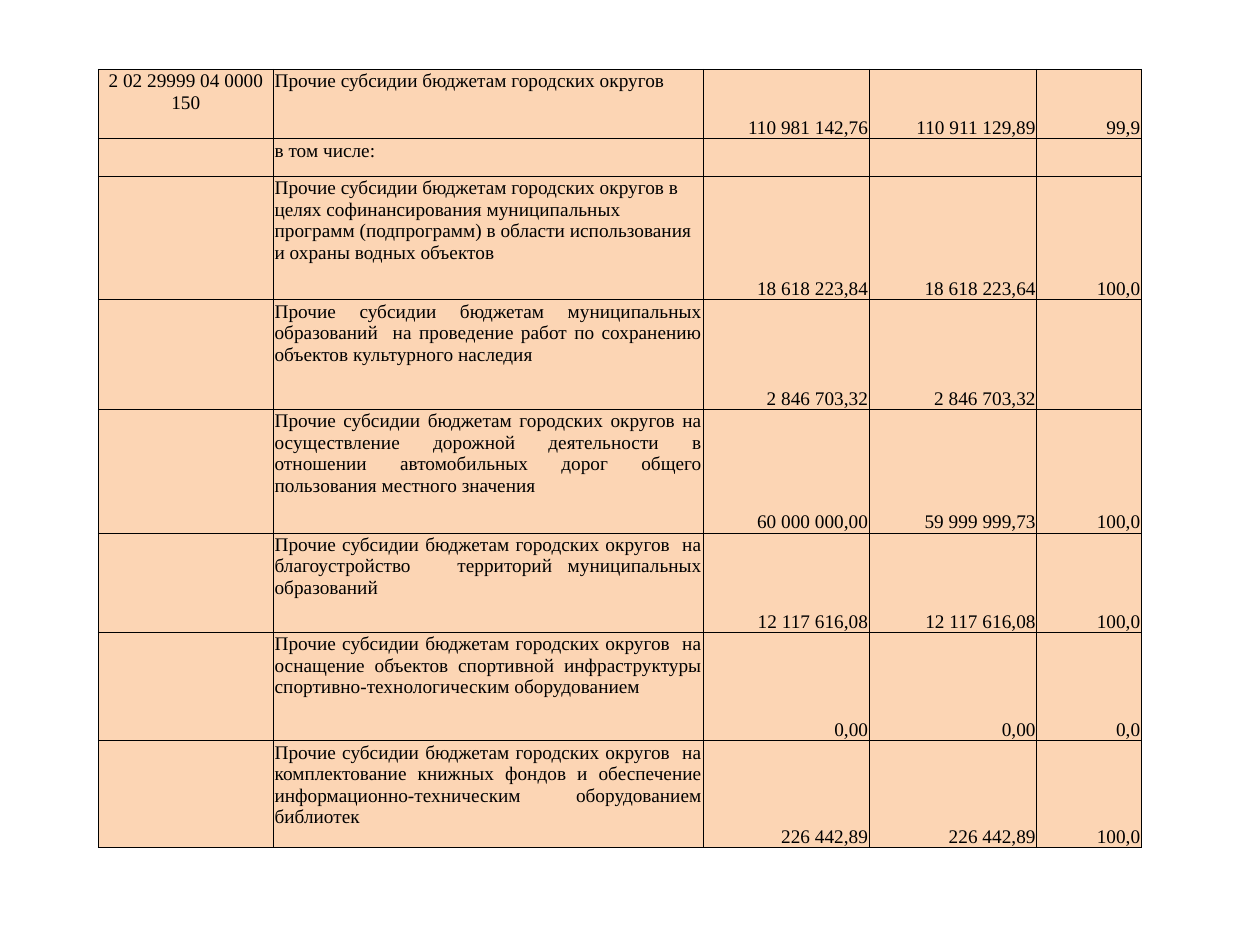
from dataclasses import dataclass

from lxml import etree
from pptx import Presentation
from pptx import util as u
from pptx.dml.color import RGBColor
from pptx.enum import text
from pptx.oxml import ns


@dataclass(frozen=True)
class Theme:
    font: str = "Times New Roman"
    size: float = 11
    ink: str = "000000"
    cell_fill: str = "FCD5B4"
    border: str = "000000"
    border_width: float = 0.5


ALIGN = text.PP_ALIGN
ANCHOR = text.MSO_ANCHOR
MARGINS = {
    "margin_left": u.Inches(0.01),
    "margin_right": u.Inches(0.01),
    "margin_top": u.Inches(0.01),
    "margin_bottom": 0,
}
COLUMNS = [1.39, 3.41, 1.32, 1.33, 0.83]
COLUMN_FORMATS = [
    (ALIGN.CENTER, ANCHOR.TOP),
    (ALIGN.JUSTIFY, ANCHOR.TOP),
    *[(ALIGN.RIGHT, ANCHOR.BOTTOM)] * 3,
]
LEFT_ALIGNED_ROWS = 3
SUBSIDIES = [
    (0.55, "2 02 29999 04 0000 150",
     "Прочие субсидии бюджетам городских округов",
     "110 981 142,76", "110 911 129,89", "99,9"),
    (0.3, "", "в том числе:", "", "", ""),
    (0.98, "",
     "Прочие субсидии бюджетам городских округов в целях софинансирования "
     "муниципальных программ (подпрограмм) в области использования и охраны "
     "водных объектов",
     "18 618 223,84", "18 618 223,64", "100,0"),
    (0.87, "",
     "Прочие субсидии бюджетам муниципальных образований  на проведение работ "
     "по сохранению объектов культурного наследия ",
     "2 846 703,32", "2 846 703,32", ""),
    (0.98, "",
     "Прочие субсидии бюджетам городских округов на осуществление дорожной "
     "деятельности в отношении автомобильных дорог общего пользования "
     "местного значения",
     "60 000 000,00", "59 999 999,73", "100,0"),
    (0.79, "",
     "Прочие субсидии бюджетам городских округов  на благоустройство   "
     "территорий муниципальных образований",
     "12 117 616,08", "12 117 616,08", "100,0"),
    (0.86, "",
     "Прочие субсидии бюджетам городских округов  на оснащение объектов "
     "спортивной инфраструктуры спортивно-технологическим оборудованием",
     "0,00", "0,00", "0,0"),
    (0.85, "",
     "Прочие субсидии бюджетам городских округов  на комплектование книжных "
     "фондов и обеспечение информационно-техническим оборудованием библиотек",
     "226 442,89", "226 442,89", "100,0"),
]


def apply(target, values):
    for name, value in values.items():
        setattr(target, name, value)


class SlideBuilder:
    def __init__(self, slide, theme):
        self.slide = slide
        self.theme = theme

    def borders(self, cell):
        properties = cell._tc.get_or_add_tcPr()
        for side in ("a:lnL", "a:lnR", "a:lnT", "a:lnB"):
            line = etree.SubElement(properties, ns.qn(side),
                                    w=str(u.Pt(self.theme.border_width)))
            fill = etree.SubElement(line, ns.qn("a:solidFill"))
            etree.SubElement(fill, ns.qn("a:srgbClr"), val=self.theme.border)

    def cell(self, cell, words, align, anchor):
        self.borders(cell)
        cell.fill.solid()
        cell.fill.fore_color.rgb = RGBColor.from_string(self.theme.cell_fill)
        apply(cell, {**MARGINS, "vertical_anchor": anchor})
        para = cell.text_frame.paragraphs[0]
        para.alignment = align
        span = para.add_run()
        span.text = words
        apply(span.font, {"name": self.theme.font, "size": u.Pt(self.theme.size)})
        span.font.color.rgb = RGBColor.from_string(self.theme.ink)

    def table(self, left, top, widths, rows):
        heights = [row[0] for row in rows]
        frame = self.slide.shapes.add_table(
            len(rows), len(widths), u.Inches(left), u.Inches(top),
            u.Inches(sum(widths)), u.Inches(sum(heights)))
        table = frame.table
        apply(table, {"first_row": False, "horz_banding": False})
        for column, width in zip(table.columns, widths):
            column.width = u.Inches(width)
        for index, (height, *values) in enumerate(rows):
            table.rows[index].height = u.Inches(height)
            for place, (words, formats) in enumerate(zip(values, COLUMN_FORMATS)):
                align, anchor = formats
                if align == ALIGN.JUSTIFY and index < LEFT_ALIGNED_ROWS:
                    align = ALIGN.LEFT
                self.cell(table.cell(index, place), words, align, anchor)


def main():
    deck = Presentation()
    apply(deck, {"slide_width": u.Inches(10), "slide_height": u.Inches(7.5)})
    page = deck.slides.add_slide(deck.slide_layouts[6])
    SlideBuilder(page, Theme()).table(0.78, 0.55, COLUMNS, SUBSIDIES)
    deck.save("out.pptx")


if __name__ == "__main__":
    main()
